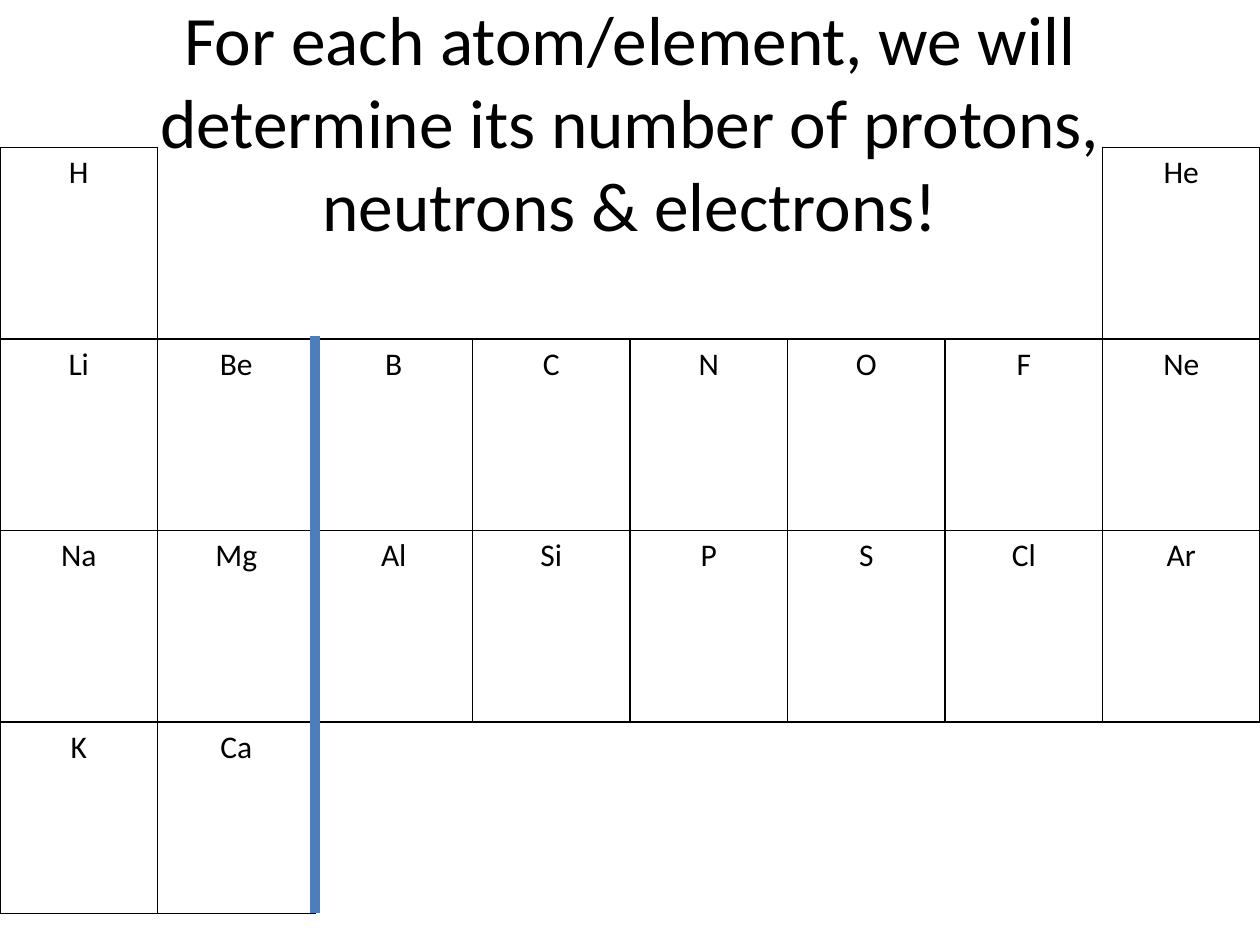
import pptx
import pptx.dml.color
import pptx.enum.text
import pptx.oxml.ns
import pptx.util
from lxml import etree
from pptx.util import Cm, Pt

# Content: the first twenty elements, an empty string for a gap
TITLE = ("For each atom/element, we will determine its number of protons, "
         "neutrons & electrons!")
ELEMENTS = [
    ["H", "", "", "", "", "", "", "He"],
    ["Li", "Be", "B", "C", "N", "O", "F", "Ne"],
    ["Na", "Mg", "Al", "Si", "P", "S", "Cl", "Ar"],
    ["K", "Ca", "", "", "", "", "", ""],
]

# Style
FONT = "Calibri"
BLACK = pptx.dml.color.RGBColor(0, 0, 0)
BLUE = pptx.dml.color.RGBColor(0x4B, 0x7E, 0xBC)
TITLE_SIZE, SYMBOL_SIZE = Pt(39.6), Pt(18)
BORDER_WIDTH, DIVIDER_WIDTH = Pt(1), Pt(6)

# Layout
SLIDE_WIDTH, SLIDE_HEIGHT = Cm(25.4), Cm(19.05)
TABLE_TOP = Cm(2.97)
ROW_HEIGHT = Cm(3.86)
ROWS, COLUMNS = len(ELEMENTS), len(ELEMENTS[0])
COLUMN_WIDTH = SLIDE_WIDTH // COLUMNS
SIDES = {"lnL": (0, -1), "lnR": (0, 1), "lnT": (-1, 0), "lnB": (1, 0)}


def write_text(text_frame, text, size):
    text_frame.text = text
    paragraph = text_frame.paragraphs[0]
    paragraph.alignment = pptx.enum.text.PP_ALIGN.CENTER
    for run in paragraph.runs:
        run.font.name = FONT
        run.font.size = size
        run.font.color.rgb = BLACK


def has_element(row, column):
    return 0 <= row < ROWS and 0 <= column < COLUMNS and bool(ELEMENTS[row][column])


def set_borders(cell, row, column):
    """Rule every side that touches an element, and clear the others."""
    properties = cell._tc.get_or_add_tcPr()
    for side, (down, right) in SIDES.items():
        line = etree.SubElement(properties, pptx.oxml.ns.qn("a:" + side),
                                w=str(BORDER_WIDTH))
        if has_element(row, column) or has_element(row + down, column + right):
            fill = etree.SubElement(line, pptx.oxml.ns.qn("a:solidFill"))
            etree.SubElement(fill, pptx.oxml.ns.qn("a:srgbClr"), val=str(BLACK))
        else:
            etree.SubElement(line, pptx.oxml.ns.qn("a:noFill"))


presentation = pptx.Presentation()
presentation.slide_width, presentation.slide_height = SLIDE_WIDTH, SLIDE_HEIGHT
slide = presentation.slides.add_slide(presentation.slide_layouts[5])

# Title
title = slide.shapes.title
title.left, title.top, title.width, title.height = Cm(1.27), 0, Cm(22.86), Cm(4.88)
title.text_frame.auto_size = pptx.enum.text.MSO_AUTO_SIZE.NONE
title.text_frame.vertical_anchor = pptx.enum.text.MSO_ANCHOR.MIDDLE
write_text(title.text_frame, TITLE, TITLE_SIZE)

# Periodic table
table = slide.shapes.add_table(ROWS, COLUMNS, 0, TABLE_TOP,
                               SLIDE_WIDTH, ROW_HEIGHT * ROWS).table
table.first_row = table.horz_banding = False
for row, symbols in enumerate(ELEMENTS):
    for column, symbol in enumerate(symbols):
        cell = table.cell(row, column)
        write_text(cell.text_frame, symbol, SYMBOL_SIZE)
        set_borders(cell, row, column)
        cell.fill.background()

# Divider after the second group
divider_x = COLUMN_WIDTH * 2
divider = slide.shapes.add_connector(
    pptx.enum.shapes.MSO_CONNECTOR.STRAIGHT, divider_x, TABLE_TOP + ROW_HEIGHT - Cm(0.05),
    divider_x, TABLE_TOP + ROW_HEIGHT * ROWS)
divider.line.color.rgb = BLUE
divider.line.width = DIVIDER_WIDTH
etree.SubElement(divider._element.spPr, pptx.oxml.ns.qn("a:effectLst"))

presentation.save("out.pptx")
